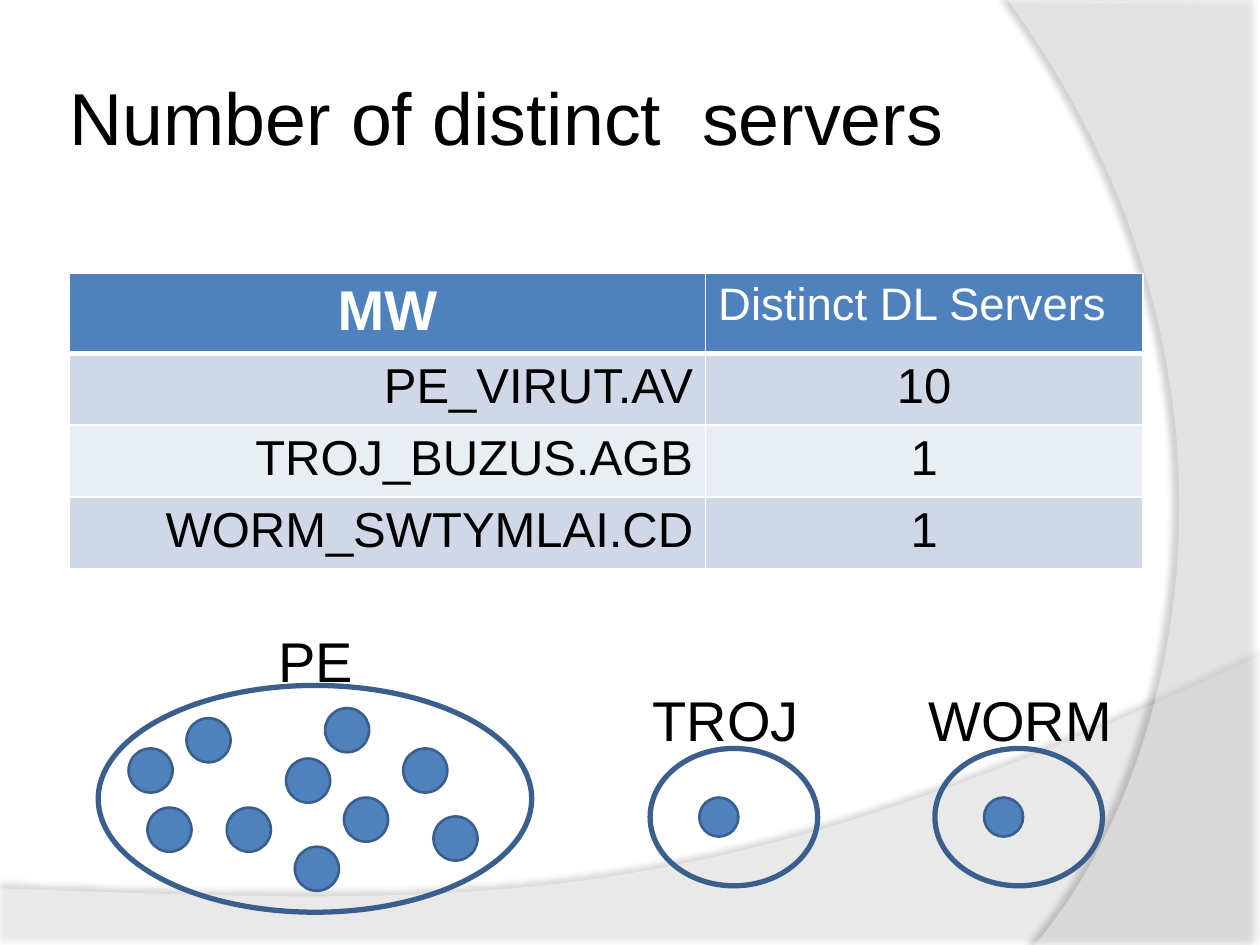
"""Build a slide comparing the number of distinct download servers per malware family."""
from dataclasses import dataclass
from typing import NamedTuple

from lxml import etree
from pptx import Presentation
from pptx import util as u
from pptx.dml.color import RGBColor
from pptx.enum import shapes, text
from pptx.oxml.ns import qn

Point = tuple[float, float]


@dataclass(frozen=True)
class Theme:
    font: str = "Arial"
    black: str = "000000"
    white: str = "FFFFFF"
    blue: str = "4F81BD"
    edge: str = "3A5F8C"
    bands: tuple[str, str] = ("D0D8E8", "E9EDF4")
    title: int = 42
    label: int = 32
    head: int = 26
    body: int = 28
    ring_line: float = 3
    dot_line: float = 1.5


class Shadow(NamedTuple):
    alpha: int
    blur: float
    dist: float
    angle: int


class Curve(NamedTuple):
    start: Point
    control1: Point
    control2: Point
    end: Point


class Swoosh(NamedTuple):
    corners: list[Point]
    curve: Curve
    opacity: int
    shadow: Shadow


class Group(NamedTuple):
    label: str
    label_at: tuple[float, float, float]
    ring: tuple[float, float, float, float]
    dot: float
    dots: list[Point]


class Cell(NamedTuple):
    text: str
    align: text.PP_ALIGN
    size: int
    bold: bool
    color: str
    fill: str


T = Theme()
AL = text.PP_ALIGN

SWOOSHES = [
    Swoosh([(0, 7.05), (0, 7.51), (10, 7.51)],
           Curve((10, 5.2), (5.59, 7.29), (3.91, 7.19), (0, 7.05)),
           45, Shadow(35, 4, 3.5, 270)),
    Swoosh([(10, 0.02), (10, 7.5)],
           Curve((8.21, 7.5), (9.35, 6.19), (10.18, 3), (8, 0)),
           40, Shadow(45, 4, 4, 180)),
]

ROWS = [("PE_VIRUT.AV", "10"), ("TROJ_BUZUS.AGB", "1"), ("WORM_SWTYMLAI.CD", "1")]

GROUPS = [
    Group("PE", (2.11, 4.92, 0.86), (0.78, 5.44, 3.44, 1.8), 0.35,
          [(1.02, 5.94), (1.48, 5.7), (1.8, 6.41), (2.27, 6.02), (2.34, 6.72),
           (3.2, 5.94), (2.73, 6.33), (3.44, 6.48), (2.58, 5.62), (1.17, 6.41)]),
    Group("TROJ", (5.08, 5.39, 1.41), (5.16, 5.94, 1.33, 1.09), 0.31, [(5.55, 6.33)]),
    Group("WORM", (7.27, 5.39, 1.72), (7.42, 5.94, 1.33, 1.09), 0.31, [(7.81, 6.33)]),
]


def rgb(color: str) -> RGBColor:
    return RGBColor.from_string(color)


def apply(obj, **values) -> None:
    for name, value in values.items():
        setattr(obj, name, value)


def write(tf, content: str, size: int, color: str, align=AL.LEFT, bold=False) -> None:
    p = tf.paragraphs[0]
    p.alignment = align
    r = p.add_run()
    r.text = content
    apply(r.font, name=T.font, size=u.Pt(size), bold=bold)
    r.font.color.rgb = rgb(color)


def add_text(s, box, content: str, size: int, **frame) -> None:
    tf = s.shapes.add_textbox(*map(u.Inches, box)).text_frame
    apply(tf, **frame)
    write(tf, content, size, T.black)


def bezier(c: Curve, steps: int = 48) -> list[Point]:
    def at(t: float) -> Point:
        weights = ((1 - t) ** 3, 3 * t * (1 - t) ** 2, 3 * t * t * (1 - t), t ** 3)
        x, y = (sum(w * pt[axis] for w, pt in zip(weights, c)) for axis in (0, 1))
        return x, y
    return [at(i / steps) for i in range(steps + 1)]


def add_swoosh(s, swoosh: Swoosh) -> None:
    points = [(u.Inches(x), u.Inches(y)) for x, y in swoosh.corners + bezier(swoosh.curve)]
    builder = s.shapes.build_freeform(*points[0], scale=1.0)
    builder.add_line_segments(points[1:], close=True)
    sp = builder.convert_to_shape()
    sp.fill.solid()
    sp.fill.fore_color.rgb = rgb(T.white)
    sp.line.fill.background()
    sp.shadow.inherit = False
    props = sp._element.spPr
    color = props.find(qn("a:solidFill")).find(qn("a:srgbClr"))
    etree.SubElement(color, qn("a:alpha"), val=str(swoosh.opacity * 1000))
    sh = swoosh.shadow
    outer = etree.SubElement(props.find(qn("a:effectLst")), qn("a:outerShdw"),
                             blurRad=str(u.Pt(sh.blur)), dist=str(u.Pt(sh.dist)),
                             dir=str(sh.angle * 60000), rotWithShape="0")
    shade = etree.SubElement(outer, qn("a:srgbClr"), val=T.black)
    etree.SubElement(shade, qn("a:alpha"), val=str(sh.alpha * 1000))


def add_ellipse(s, box, line: float, fill: str | None = None) -> None:
    sp = s.shapes.add_shape(shapes.MSO_SHAPE.OVAL, *map(u.Inches, box))
    sp.shadow.inherit = False
    if fill:
        sp.fill.solid()
        sp.fill.fore_color.rgb = rgb(fill)
    else:
        sp.fill.background()
    sp.line.color.rgb = rgb(T.edge)
    sp.line.width = u.Pt(line)


def add_group(s, g: Group) -> None:
    add_ellipse(s, g.ring, T.ring_line)
    add_text(s, (*g.label_at, 0.63), g.label, T.label, word_wrap=False)
    for x, y in g.dots:
        add_ellipse(s, (x, y, g.dot, g.dot), T.dot_line, T.blue)


def fill_cell(cell, c: Cell, top: float, bottom: float) -> None:
    props = cell._tc.get_or_add_tcPr()
    for side, width in zip("LRTB", (1, 1, top, bottom)):
        ln = etree.SubElement(props, qn(f"a:ln{side}"), w=str(u.Pt(width)))
        etree.SubElement(etree.SubElement(ln, qn("a:solidFill")), qn("a:srgbClr"), val=T.white)
    cell.fill.solid()
    cell.fill.fore_color.rgb = rgb(c.fill)
    write(cell.text_frame, c.text, c.size, c.color, c.align, c.bold)


def add_server_table(s) -> None:
    grid = [[Cell("MW", AL.CENTER, T.label, True, T.white, T.blue),
             Cell("Distinct DL Servers", AL.LEFT, T.head, False, T.white, T.blue)]]
    for i, row in enumerate(ROWS):
        grid.append([Cell(value, align, T.body, False, T.black, T.bands[i % 2])
                     for value, align in zip(row, (AL.RIGHT, AL.CENTER))])
    box = map(u.Inches, (0.55, 2.17, 8.52, 2.3))
    table = s.shapes.add_table(len(grid), 2, *box).table
    for column, width in zip(table.columns, (5.05, 3.47)):
        column.width = u.Inches(width)
    for i, cells in enumerate(grid):
        table.rows[i].height = u.Inches(0.57 if i else 0.59)
        for j, c in enumerate(cells):
            fill_cell(table.cell(i, j), c, 3 if i == 1 else 1, 1 if i else 3)


def main() -> None:
    prs = Presentation()
    apply(prs, slide_width=u.Inches(10), slide_height=u.Inches(7.5))
    s = prs.slides.add_slide(prs.slide_layouts[6])
    for swoosh in SWOOSHES:
        add_swoosh(s, swoosh)
    inset = u.Inches(0.05)
    add_text(s, (0.5, 0.3, 8.17, 1.25), "Number of distinct  servers", T.title, word_wrap=True,
             vertical_anchor=text.MSO_ANCHOR.MIDDLE, margin_left=inset, margin_right=inset)
    add_server_table(s)
    for g in GROUPS:
        add_group(s, g)
    prs.save("out.pptx")


if __name__ == "__main__":
    main()
